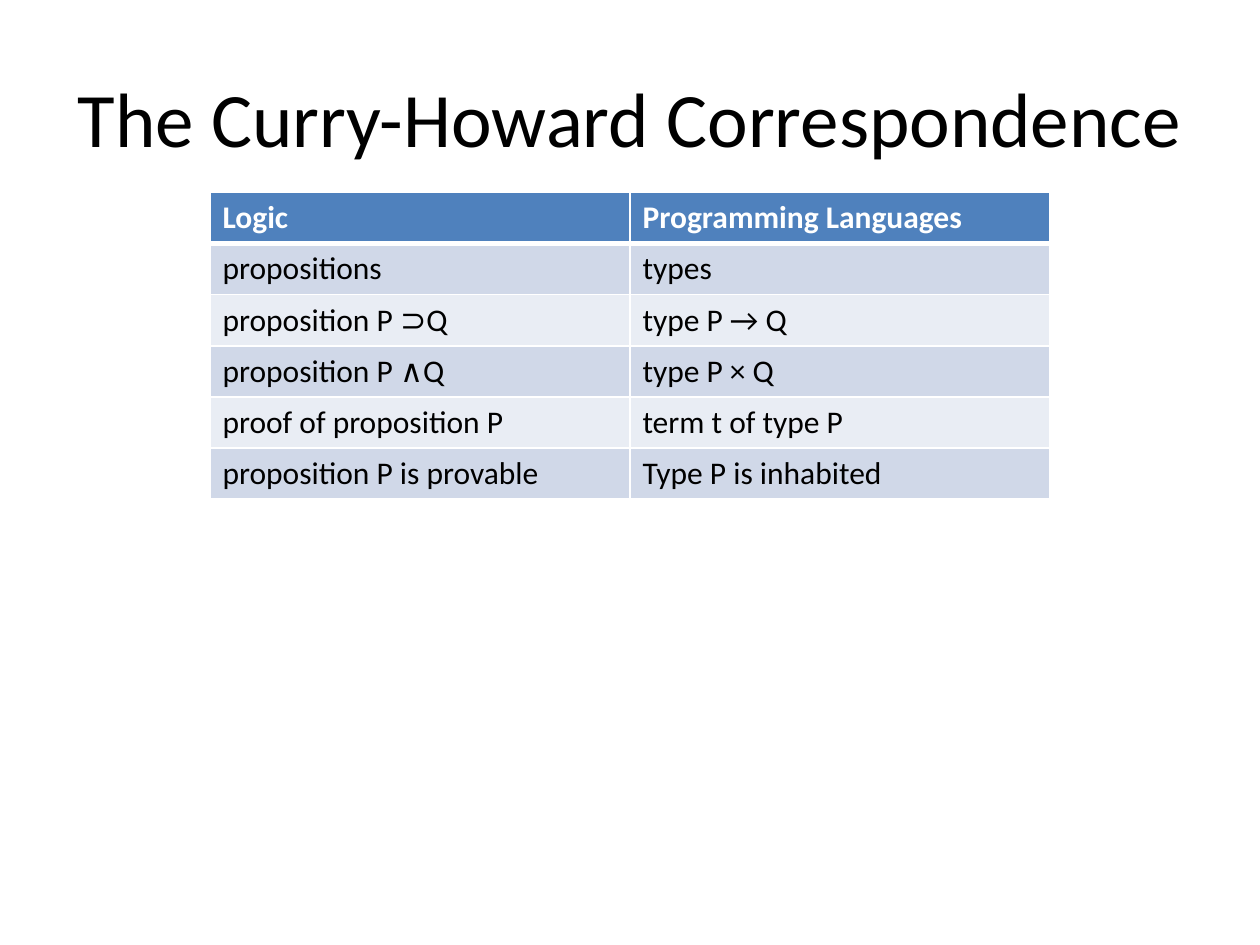
from lxml import etree
from pptx import Presentation
from pptx.dml.color import RGBColor
from pptx.enum.text import MSO_ANCHOR, PP_ALIGN
from pptx.oxml.ns import qn
from pptx.util import Pt

LEFT, CENTER = PP_ALIGN.LEFT, PP_ALIGN.CENTER
TOP, MIDDLE = MSO_ANCHOR.TOP, MSO_ANCHOR.MIDDLE

ROWS = [
    ("Logic", "Programming Languages"),
    ("propositions", "types"),
    ("proposition P ⊃Q", "type P → Q"),
    ("proposition P ∧Q", "type P × Q"),
    ("proof of proposition P", "term t of type P"),
    ("proposition P is provable", "Type P is inhabited"),
]


def rgb(code):
    return RGBColor.from_string(code)


def write(frame, text, size=18, color="000000", bold=False, align=LEFT,
          font="Calibri"):
    para = frame.paragraphs[0]
    para.alignment = align
    run = para.add_run()
    run.text = text
    run.font.name, run.font.size, run.font.bold = font, Pt(size), bold
    run.font.color.rgb = rgb(color)


class Deck:
    head, bands, white = "4F81BD", ("D0D8E8", "E9EDF4"), "FFFFFF"

    def __init__(self, wide, high):
        self.file = Presentation()
        self.file.slide_width, self.file.slide_height = Pt(wide), Pt(high)
        # Title-only layout
        self.slide = self.file.slides.add_slide(self.file.slide_layouts[5])

    def title(self, text, left, top, wide, high):
        shape = self.slide.shapes.title
        shape.left, shape.top = Pt(left), Pt(top)
        shape.width, shape.height = Pt(wide), Pt(high)
        shape.text_frame.vertical_anchor = MIDDLE
        write(shape.text_frame, text, size=44, align=CENTER)

    def edges(self, cell, base):
        # Border lines come before the fill in the cell properties
        props = cell._tc.get_or_add_tcPr()
        sides = {"lnL": 1, "lnR": 1, "lnT": 1, "lnB": base}
        for i, (side, width) in enumerate(sides.items()):
            line = etree.Element(qn("a:" + side), w=str(Pt(width)))
            fill = etree.SubElement(line, qn("a:solidFill"))
            etree.SubElement(fill, qn("a:srgbClr"), val=self.white)
            props.insert(i, line)

    def table(self, rows, left, top, wide, high):
        frame = self.slide.shapes.add_table(
            len(rows), len(rows[0]), Pt(left), Pt(top), Pt(wide), Pt(high))
        grid = frame.table
        for r, row in enumerate(rows):
            first = r == 0
            for c, text in enumerate(row):
                cell = grid.cell(r, c)
                cell.vertical_anchor = TOP
                cell.fill.solid()
                cell.fill.fore_color.rgb = rgb(
                    self.head if first else self.bands[(r - 1) % 2])
                write(cell.text_frame, text, bold=first,
                      color=self.white if first else "000000")
                self.edges(cell, 3 if first else 1)
                if r == 1:
                    # Keep the heavy rule under the header
                    cell._tc.tcPr.find(qn("a:lnT")).set("w", str(Pt(3)))


def main():
    deck = Deck(720, 540)
    deck.title("The Curry-Howard Correspondence", 36, 21.6, 648, 90)
    deck.table(ROWS, 120, 110, 480, 175.2)
    deck.file.save("out.pptx")


if __name__ == "__main__":
    main()
